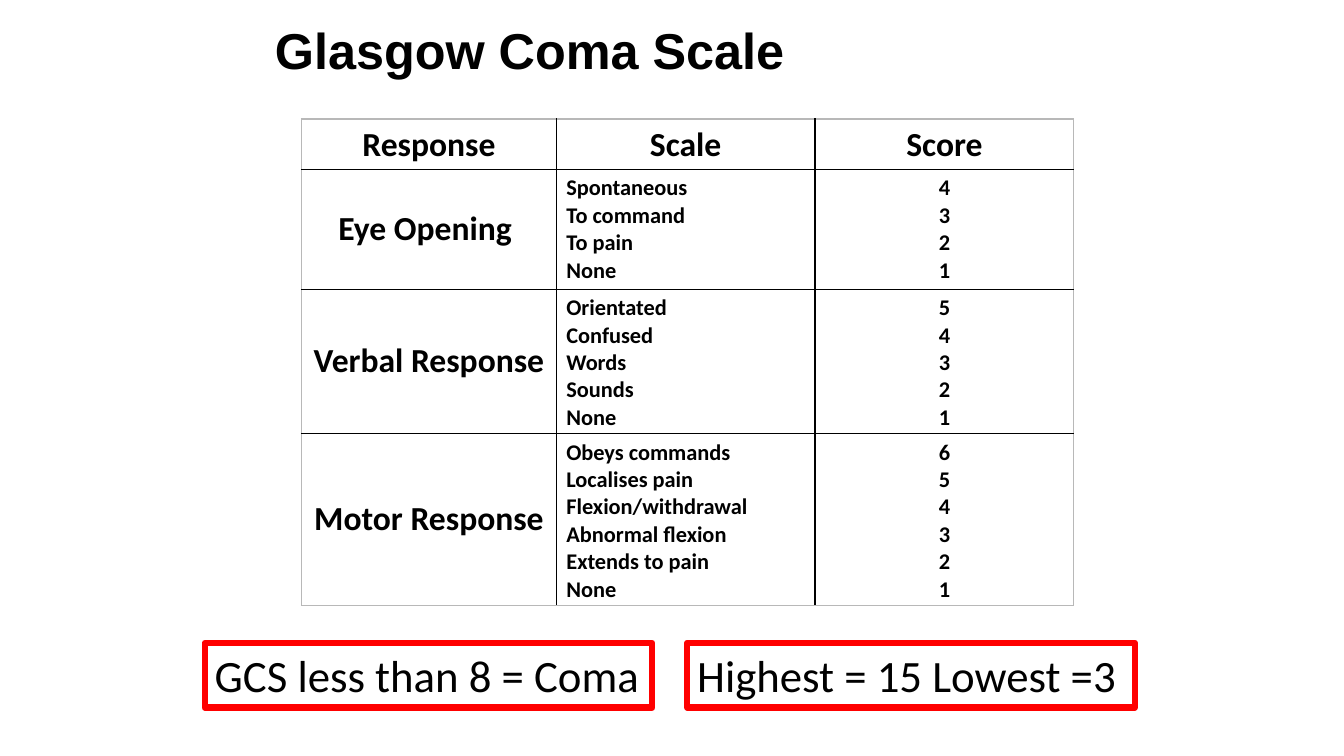
from dataclasses import dataclass

from lxml.etree import SubElement
from pptx import Presentation
from pptx.dml.color import RGBColor
from pptx.enum.shapes import MSO_SHAPE as Shape
from pptx.enum.text import MSO_ANCHOR as Anchor, PP_ALIGN as Align
from pptx.oxml.ns import qn
from pptx.util import Cm, Pt


@dataclass(frozen=True)
class Theme:
    ink: str = "000000"
    edge: str = "B8B8B8"
    accent: str = "FF0000"
    title_font: str = "Arial"
    body_font: str = "Calibri"
    title_size: int = 36
    note_size: int = 32
    heading_size: int = 24
    item_size: int = 16


@dataclass(frozen=True)
class Category:
    name: str
    height: float
    responses: tuple[str, ...]

    @property
    def scores(self) -> list[str]:
        return [str(score) for score in range(len(self.responses), 0, -1)]


@dataclass(frozen=True)
class Note:
    text: str
    left: float


THEME = Theme()
HEADINGS = ("Response", "Scale", "Score")
HEADING_HEIGHT = 1.27
COLUMN_WIDTHS = (6.42, 6.52, 6.52)
CATEGORIES = (
    Category("Eye Opening ", 3.02, ("Spontaneous", "To command", "To pain", "None")),
    Category("Verbal Response", 3.63, ("Orientated", "Confused", "Words", "Sounds", "None")),
    Category("Motor Response", 4.3, ("Obeys commands", "Localises pain ", "Flexion/withdrawal",
                                     "Abnormal flexion", "Extends to pain ", "None")),
)
NOTES = (Note("GCS less than 8 = Coma", 5.16), Note("Highest = 15 Lowest =3", 17.32))


def write(frame, lines: list[str], size: int, font: str, bold: bool, align: Align) -> None:
    frame.text = "\n".join(lines)
    for para in frame.paragraphs:
        para.alignment = align
        para.font.size = Pt(size)
        para.font.name = font
        para.font.bold = bold
        para.font.color.rgb = RGBColor.from_string(THEME.ink)


def add_border(cell, side: str, color: str) -> None:
    line = SubElement(cell._tc.get_or_add_tcPr(), qn(f"a:ln{side}"), w=str(Pt(1)))
    fill = SubElement(line, qn("a:solidFill"))
    SubElement(fill, qn("a:srgbClr"), val=color)


def fill_cell(table, row: int, column: int, lines: list[str], size: int,
              align: Align, anchor: Anchor) -> None:
    cell = table.cell(row, column)
    write(cell.text_frame, lines, size, THEME.body_font, True, align)
    cell.vertical_anchor = anchor
    outer = {"L": column == 0, "R": column == len(HEADINGS) - 1,
             "T": row == 0, "B": row == len(CATEGORIES)}
    for side, is_outer in outer.items():
        add_border(cell, side, THEME.edge if is_outer else THEME.ink)
    cell.fill.background()


def add_scale_table(page) -> None:
    heights = [HEADING_HEIGHT, *(category.height for category in CATEGORIES)]
    table = page.shapes.add_table(
        len(heights), len(HEADINGS), Cm(7.6), Cm(3),
        Cm(sum(COLUMN_WIDTHS)), Cm(sum(heights))).table
    table.first_row = False
    table.horz_banding = False
    for column, width in zip(table.columns, COLUMN_WIDTHS):
        column.width = Cm(width)
    for row, height in zip(table.rows, heights):
        row.height = Cm(height)
    for column, heading in enumerate(HEADINGS):
        fill_cell(table, 0, column, [heading], THEME.heading_size, Align.CENTER, Anchor.TOP)
    for row, category in enumerate(CATEGORIES, start=1):
        fill_cell(table, row, 0, [category.name], THEME.heading_size,
                  Align.CENTER, Anchor.MIDDLE)
        fill_cell(table, row, 1, list(category.responses), THEME.item_size,
                  Align.LEFT, Anchor.TOP)
        fill_cell(table, row, 2, category.scores, THEME.item_size,
                  Align.CENTER, Anchor.TOP)


def add_note(page, note: Note) -> None:
    box = page.shapes.add_shape(Shape.RECTANGLE, Cm(note.left), Cm(16.2), Cm(11.28), Cm(1.63))
    box.shadow.inherit = False
    box.fill.background()
    box.line.color.rgb = RGBColor.from_string(THEME.accent)
    box.line.width = Pt(4.5)
    SubElement(box.line._ln, qn("a:round"))
    frame = box.text_frame
    frame.word_wrap = True
    frame.vertical_anchor = Anchor.TOP
    write(frame, [note.text], THEME.note_size, THEME.body_font, False, Align.LEFT)


def add_title(page) -> None:
    box = page.shapes.add_textbox(Cm(6.68), Cm(0.25), Cm(21.9), Cm(2.16))
    frame = box.text_frame
    frame.word_wrap = True
    frame.vertical_anchor = Anchor.MIDDLE
    write(frame, ["Glasgow Coma Scale"], THEME.title_size, THEME.title_font, True, Align.LEFT)
    frame.paragraphs[0].line_spacing = 0.9


def main() -> None:
    deck = Presentation()
    deck.slide_width = Cm(33.87)
    deck.slide_height = Cm(19.05)
    page = deck.slides.add_slide(deck.slide_layouts[6])
    add_title(page)
    add_scale_table(page)
    for note in NOTES:
        add_note(page, note)
    deck.save("out.pptx")


if __name__ == "__main__":
    main()
